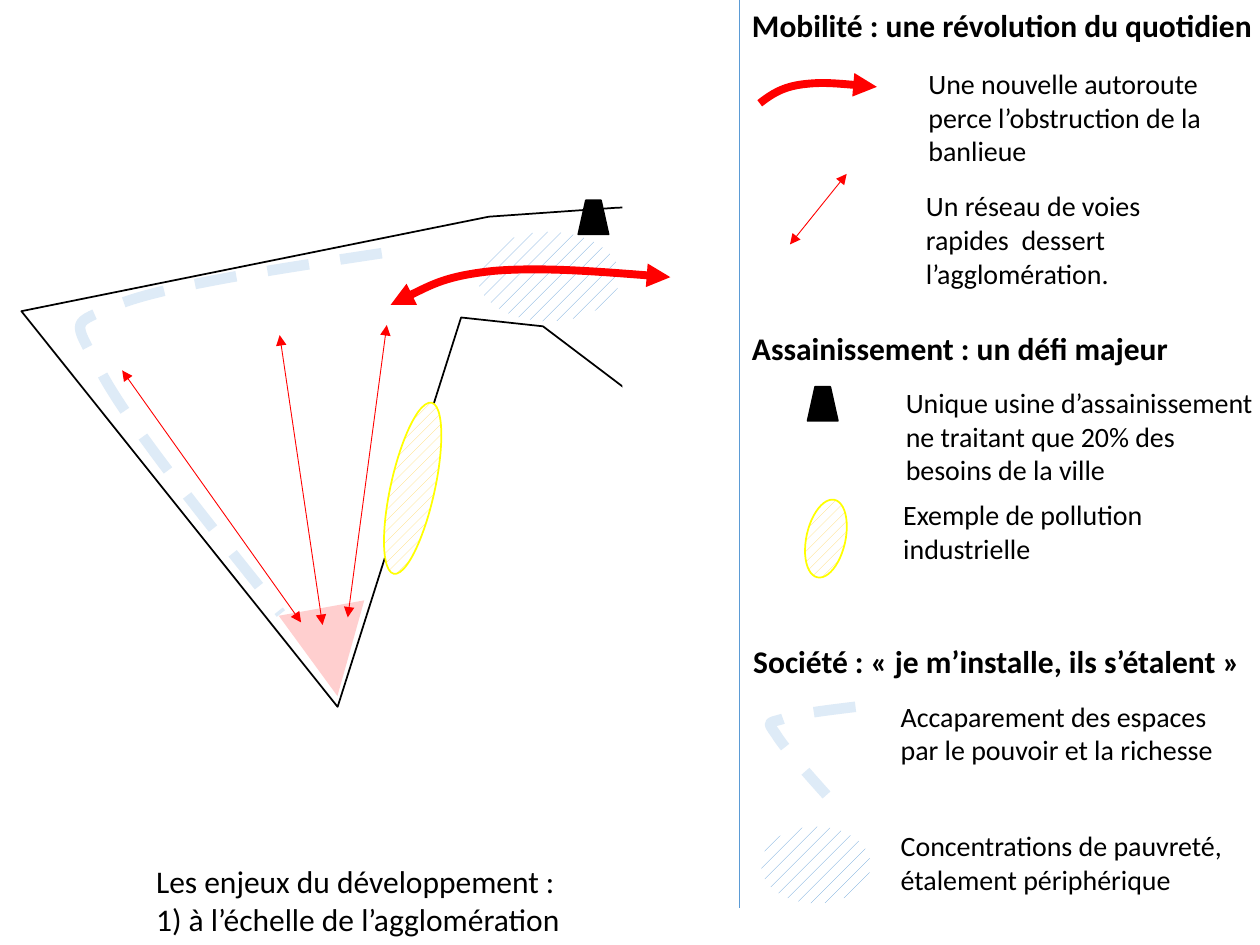
from dataclasses import dataclass

from lxml.etree import SubElement
from pptx import Presentation
from pptx.dml.color import RGBColor
from pptx.enum.dml import MSO_LINE_DASH_STYLE as Dash, MSO_PATTERN_TYPE as Pattern
from pptx.enum.shapes import MSO_CONNECTOR as Connector, MSO_SHAPE as Shape
from pptx.enum.text import MSO_AUTO_SIZE as AutoSize
from pptx.oxml.ns import qn
from pptx.util import Inches, Pt


@dataclass(frozen=True)
class Theme:
    font: str = "Calibri"
    heading: int = 18
    body: int = 16
    black: str = "000000"
    white: str = "FFFFFF"
    red: str = "FF0000"
    blue: str = "5B9BD5"
    pale_blue: str = "DEEBF7"
    gold: str = "FFD966"
    yellow: str = "FFFF00"
    thin: float = 0.5
    outline: float = 1
    road: float = 4.5
    band: float = 6


T = Theme()
COLS, ROWS = 100, 75  # grid of square cells
CELL = 0.1

HEADINGS = [
    (58.7, 0, 42, "Mobilité : une révolution du quotidien"),
    (58.7, 25.6, 35.3, "Assainissement : un défi majeur"),
    (58.8, 50.5, 41, "Société : « je m’installe, ils s’étalent »"),
]
LEGEND = [
    (72.7, 4.8, 25.8, "Une nouvelle autoroute perce l’obstruction de la banlieue"),
    (72.5, 14.5, 25.8, "Un réseau de voies rapides  dessert l’agglomération."),
    (70.9, 30.1, 30.2, "Unique usine d’assainissement ne traitant que 20% des besoins de la ville"),
    (70.7, 39, 25.8, "Exemple de pollution industrielle"),
    (70.5, 55, 29.5, "Accaparement des espaces par le pouvoir et la richesse"),
    (70.5, 65.3, 29.5, "Concentrations de pauvreté, étalement périphérique"),
]
CITY = [(26.8, 56.1), (1.7, 24.7), (38.8, 17.2), (48.8, 16.5), (51, 16.4),
        (50.5, 31.5), (43.1, 25.9), (36.6, 25.2)]
# Curves: a start point, then three Bézier points per segment
MAP_ROAD = [(31, 24.2), (33.2, 23.1), (35.4, 21.9), (39.2, 21.5),
            (42.9, 21.2), (48.1, 21.6), (53.2, 22)]
LEGEND_ROAD = [(60.3, 8.2), (61.2, 7.5), (62.1, 6.9), (63.7, 6.7),
               (65.2, 6.5), (67.4, 6.7), (69.6, 6.9)]
MAP_BAND = [(30.3, 20.1), (21.7, 21.4), (13, 22.7), (9.3, 24.2), (5.6, 25.8),
            (5.7, 25.2), (7.9, 29.3), (10, 33.4), (16.2, 41.1), (22.3, 48.7)]
LEGEND_BAND = [(67.9, 56.1), (65.4, 56.4), (63, 56.7), (62, 57.1), (60.9, 57.4),
               (60.9, 57.3), (61.6, 58.3), (62.2, 59.3), (63.9, 61.2), (65.6, 63.1)]
FAST_ROADS = [((9.7, 29.4), (23.9, 49.4)), ((30.7, 25.8), (27.6, 49)),
              ((22.2, 26.6), (25.6, 49.6)), ((67.2, 13.8), (62.7, 19.4))]


def cells(*values):
    return [Inches(v * CELL) for v in values]


def rgb(color):
    return RGBColor.from_string(color)


def style_line(s, color, width, head=False, tail=False):
    s.line.color.rgb = rgb(color)
    s.line.width = Pt(width)
    for name, wanted in (("a:headEnd", head), ("a:tailEnd", tail)):
        if wanted:
            SubElement(s.line._get_or_add_ln(), qn(name), type="triangle")


def add_preset(shapes, kind, box, fill=None, line=None, rotation=0):
    s = shapes.add_shape(kind, *cells(*box))
    s.shadow.inherit = False
    s.rotation = rotation
    if fill:
        s.fill.solid()
        s.fill.fore_color.rgb = rgb(fill)
    if line:
        style_line(s, line, T.outline)
    else:
        s.line.fill.background()
    return s


def add_hatched_oval(shapes, box, pattern, color, line=None, rotation=0):
    s = add_preset(shapes, Shape.OVAL, box, line=line, rotation=rotation)
    s.fill.patterned()
    s.fill.pattern = pattern
    s.fill.fore_color.rgb = rgb(color)
    s.fill.back_color.rgb = rgb(T.white)


def add_poverty(shapes, box):
    add_hatched_oval(shapes, box, Pattern.PERCENT_10, T.blue)


def add_pollution(shapes, box):
    add_hatched_oval(shapes, box, Pattern.DASHED_UPWARD_DIAGONAL, T.gold, T.yellow, 12.5)


def add_plant(shapes, left, top):
    add_preset(shapes, Shape.TRAPEZOID, (left, top, 2.4, 2.7), T.black, T.black)


def add_path(shapes, points, close=False):
    start, *rest = [cells(*point) for point in points]
    builder = shapes.build_freeform(*start)
    builder.add_line_segments(rest, close=close)
    s = builder.convert_to_shape()
    s.shadow.inherit = False
    s.fill.background()
    return s


def add_curve(shapes, points, color, width, head=False, tail=False):
    """Open path whose points are joined, three by three, into Bézier segments."""
    s = add_path(shapes, points)
    segments = list(s._element.iter(qn("a:lnTo")))
    for i in range(0, len(segments), 3):
        curve = SubElement(segments[i].getparent(), qn("a:cubicBezTo"))
        for segment in segments[i:i + 3]:
            curve.append(segment[0])
            segment.getparent().remove(segment)
    style_line(s, color, width, head, tail)
    return s


def add_band(shapes, points):
    add_curve(shapes, points, T.pale_blue, T.band).line.dash_style = Dash.DASH


def add_straight(shapes, start, end, color, arrows=False):
    s = shapes.add_connector(Connector.STRAIGHT, *cells(*start, *end))
    style_line(s, color, T.thin, arrows, arrows)
    SubElement(s._element.spPr, qn("a:effectLst"))


def add_text(shapes, box, text, size, bold=False, wrap=True):
    tf = shapes.add_textbox(*cells(*box)).text_frame
    tf.word_wrap = wrap
    tf.auto_size = AutoSize.SHAPE_TO_FIT_TEXT
    r = tf.paragraphs[0].add_run()
    r.text = text
    r.font.name = T.font
    r.font.size = Pt(size)
    r.font.bold = bold
    r.font.color.rgb = rgb(T.black)


def add_city(shapes):
    """City outline, left open on its eastern side, and its centre."""
    group = shapes.add_group_shape()
    style_line(add_path(group.shapes, CITY, close=True), T.black, T.outline)
    add_preset(group.shapes, Shape.RECTANGLE, (49.4, 15.1, 2.9, 17.2), T.white)
    centre = add_preset(shapes, Shape.ISOSCELES_TRIANGLE, (22.7, 48.2, 6.9, 7.1),
                        T.red, rotation=169.8)
    color = centre._element.spPr.find(qn("a:solidFill"))[0]
    SubElement(color, qn("a:alpha"), val="19000")


def add_symbols(shapes):
    add_curve(shapes, MAP_ROAD, T.red, T.road, head=True, tail=True)
    add_curve(shapes, LEGEND_ROAD, T.red, T.road, tail=True)
    for start, end in FAST_ROADS:
        add_straight(shapes, start, end, T.red, arrows=True)
    for box in ((31, 31.8, 3.5, 13.9), (64, 39.6, 3.1, 6.3)):
        add_pollution(shapes, box)
    for corner in ((45.9, 15.9), (64.1, 30.7)):
        add_plant(shapes, *corner)
    for points in (MAP_BAND, LEGEND_BAND):
        add_band(shapes, points)
    add_poverty(shapes, (60.4, 65.6, 8.7, 6.1))


def main():
    prs = Presentation()
    prs.slide_width, prs.slide_height = cells(COLS, ROWS)
    shapes = prs.slides.add_slide(prs.slide_layouts[6]).shapes
    add_poverty(shapes, (37.9, 18.4, 11.3, 7.1))
    add_city(shapes)
    add_symbols(shapes)
    add_straight(shapes, (58.7, 0), (58.7, 72.1), T.blue)
    for left, top, width, text in HEADINGS:
        add_text(shapes, (left, top, width, 4), text, T.heading, bold=True, wrap=False)
    for left, top, width, text in LEGEND:
        height = 9.1 if top < 35 else 6.4
        add_text(shapes, (left, top, width, height), text, T.body)
    add_text(shapes, (11.4, 67.9, 35.2, 7.1),
             "Les enjeux du développement : 1) à l’échelle de l’agglomération", T.heading)
    prs.save("out.pptx")


if __name__ == "__main__":
    main()
